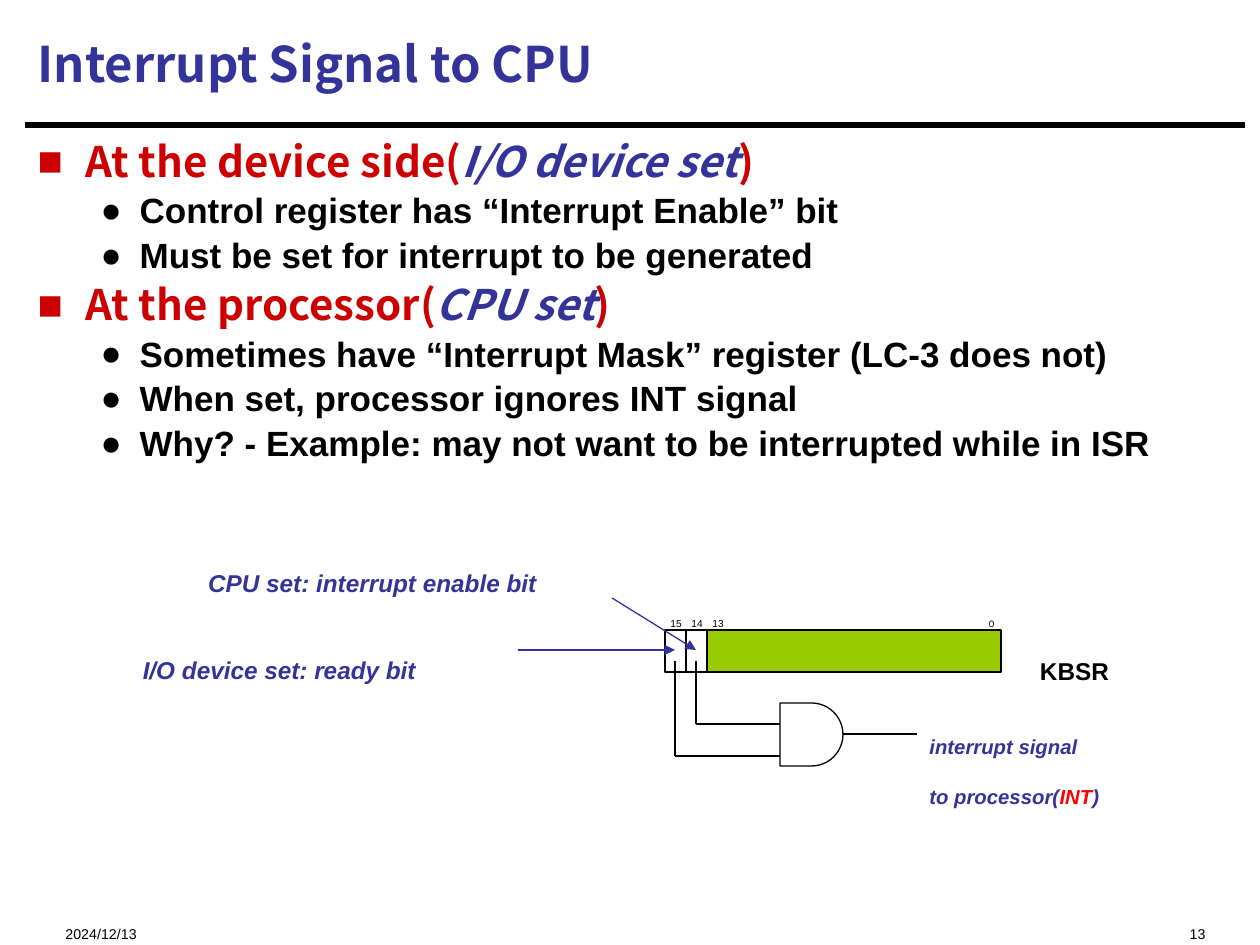
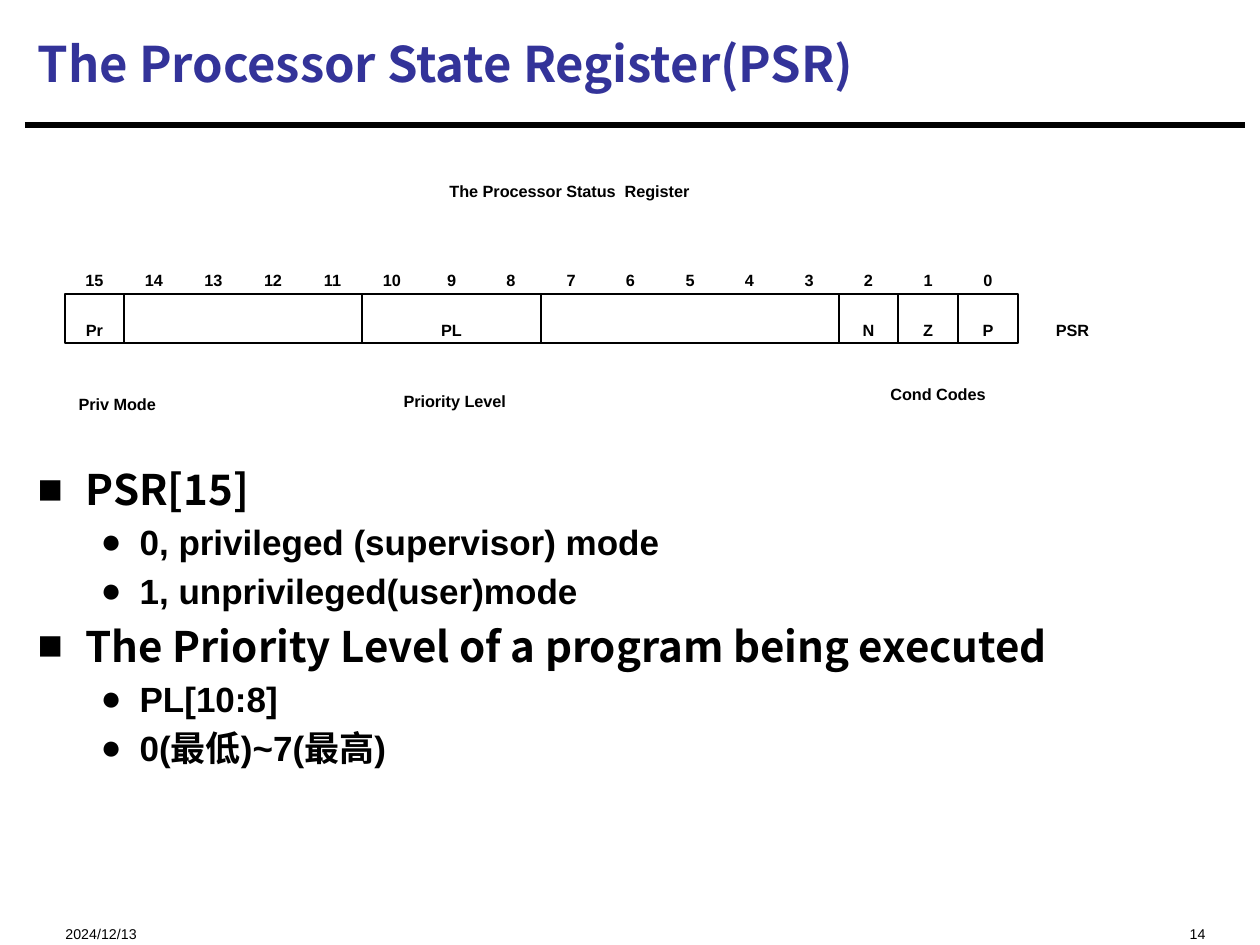
from pptx import Presentation
from pptx.dml.color import RGBColor
from pptx.enum.shapes import MSO_CONNECTOR, MSO_SHAPE as SHAPE
from pptx.enum.text import MSO_ANCHOR as ANCHOR, MSO_AUTO_SIZE as AUTO, PP_ALIGN as ALIGN
from pptx.oxml.ns import qn
from pptx.util import Pt
from lxml.etree import SubElement

PX = 914400 / 126
BLACK, WHITE, BLUE, CRIMSON = "000000", "FFFFFF", "333399", "CC0000"
RED, GREEN = "FF0000", "99CC00"
ARIAL, HEAVY = "Arial", "Noto Sans CJK SC"
SUBSCRIPT = "-30000"
DATE = "2024/12/13"

# Bullet levels: character, left margin, hanging indent, size, font
LEVELS = [("■", 48, 48, 24, HEAVY), ("●", 102, 39, 20, ARIAL)]


def emu(*lengths):
    return [round(length * PX) for length in lengths]


def color(hex_text):
    return RGBColor.from_string(hex_text)


# Text
def write(para, text, size=16, ink=BLACK, font=ARIAL, bold=True, italic=False, sub=False):
    """Add text to a paragraph; a newline becomes a line break."""
    for index, piece in enumerate(text.split("\n")):
        if index:
            para.add_line_break()
        span = para.add_run()
        span.text = piece
        span.font.size = Pt(size)
        span.font.name = font
        span.font.bold = bold
        span.font.italic = italic
        span.font.color.rgb = color(ink)
        props = span._r.get_or_add_rPr()
        SubElement(props, qn("a:ea")).set("typeface", HEAVY)
        if sub:
            props.set("baseline", SUBSCRIPT)


def label(page, place, text, align=ALIGN.CENTER, wrap=False, **style):
    box = page.shapes.add_textbox(*emu(*place))
    box.text_frame.word_wrap = wrap
    para = box.text_frame.paragraphs[0]
    para.alignment = align
    write(para, text, sub=True, **style)
    return para


# Shapes and lines
def block(page, place, text="", fill=WHITE, outline=BLACK, kind=SHAPE.RECTANGLE):
    box = page.shapes.add_shape(kind, *emu(*place))
    box.shadow.inherit = False
    if fill:
        box.fill.solid()
        box.fill.fore_color.rgb = color(fill)
    else:
        box.fill.background()
    box.line.color.rgb = color(outline)
    box.line.width = Pt(0.75)
    if text:
        frame = box.text_frame
        frame.word_wrap = False
        frame.vertical_anchor = ANCHOR.TOP
        frame.paragraphs[0].alignment = ALIGN.CENTER
        write(frame.paragraphs[0], text, sub=True)


def wire(page, *ends, ink=BLACK, width=0.75, arrow=False):
    line = page.shapes.add_connector(MSO_CONNECTOR.STRAIGHT, *emu(*ends))
    line.line.color.rgb = color(ink)
    line.line.width = Pt(width)
    if arrow:
        SubElement(line.line._get_or_add_ln(), qn("a:tailEnd")).set("type", "triangle")
    SubElement(line._element.spPr, qn("a:effectLst"))


# Placeholders
def prepare(holder, place, anchor):
    holder.left, holder.top, holder.width, holder.height = emu(*place)
    frame = holder.text_frame
    frame.word_wrap = True
    frame.auto_size = AUTO.NONE
    frame.vertical_anchor = anchor
    return frame


def start_page(deck, title, number):
    page = deck.slides.add_slide(deck.slide_layouts[1])
    wire(page, 25, 125, 1245, 125, width=3.75)
    frame = prepare(page.shapes.title, (25, 10, 1218, 106), ANCHOR.MIDDLE)
    frame.paragraphs[0].alignment = ALIGN.LEFT
    write(frame.paragraphs[0], title, size=28, ink=BLUE, font=HEAVY)
    label(page, (53, 901, 315, 34), DATE, ALIGN.LEFT, size=14, bold=False)
    label(page, (840, 901, 378, 34), str(number), ALIGN.RIGHT, size=14, bold=False)
    return page


def bullet_list(page, place, items, spacing=1.0):
    """Each item is a level and its spans; a span is text and its format."""
    frame = prepare(page.placeholders[1], place, ANCHOR.TOP)
    for index, (level, *spans) in enumerate(items):
        para = frame.add_paragraph() if index else frame.paragraphs[0]
        para.level = level
        para.line_spacing = spacing
        mark, margin, hang, size, font = LEVELS[level]
        props = para._p.get_or_add_pPr()
        props.set("marL", str(emu(margin)[0]))
        props.set("indent", str(-emu(hang)[0]))
        SubElement(props, qn("a:buFont")).set("typeface", ARIAL)
        SubElement(props, qn("a:buChar")).set("char", mark)
        for text, style in spans:
            write(para, text, size=size, font=font, **style)


def heading(text, setter):
    return (0, (text + "(", {"ink": CRIMSON}),
            (setter, {"ink": BLUE, "italic": True}), (")", {"ink": CRIMSON}))


def plain(level, text):
    return level, (text, {})


# Slides
def interrupt_page(deck):
    page = start_page(deck, "Interrupt Signal to CPU", 13)
    bullet_list(page, (25, 135, 1218, 755), [
        heading("At the device side", "I/O device set"),
        plain(1, "Control register has “Interrupt Enable” bit"),
        plain(1, "Must be set for interrupt to be generated"),
        heading("At the processor", "CPU set"),
        plain(1, "Sometimes have “Interrupt Mask” register (LC-3 does not)"),
        plain(1, "When set, processor ignores INT signal"),
        plain(1, "Why? - Example: may not want to be interrupted while in ISR"),
    ], spacing=0.9)

    # Keyboard status register
    left, top, bit, height = 665, 630, 21, 42
    for index in range(2):
        block(page, (left + index * bit, top, bit, height))
    block(page, (left + 2 * bit, top, 14 * bit, height), fill=GREEN)
    for index, name in enumerate(("15", "14", "13")):
        label(page, (654 + index * bit, 599, 44, 34), name, size=10, bold=False)
    label(page, (974, 599, 35, 34), "0", size=10, font="Karla", bold=False)
    label(page, (1002, 620, 145, 63), "KBSR", size=24)

    # Who sets each bit
    note = {"size": 24, "ink": BLUE, "italic": True}
    label(page, (74, 532, 597, 64), "CPU set: interrupt enable bit", **note)
    label(page, (29, 619, 501, 63), "I/O device set: ready bit", **note)
    wire(page, 612, 598, 696, 650, ink=BLUE, arrow=True)
    wire(page, 518, 650, 675, 650, ink=BLUE, arrow=True)

    # AND gate and its wires
    block(page, (780, 703, 63, 63), fill=None, kind=SHAPE.FLOWCHART_DELAY)
    for x, y in ((696, 724), (675, 756)):
        wire(page, x, 661, x, y)
        wire(page, x, y, 780, y)
    wire(page, 843, 734, 917, 734)
    signal = {"size": 20, "italic": True}
    para = label(page, (917, 703, 330, 97), "interrupt signal \nto processor(",
                 ALIGN.LEFT, wrap=True, ink=BLUE, **signal)
    write(para, "INT", ink=RED, sub=True, **signal)
    write(para, ")", ink=BLUE, sub=True, **signal)


def psr_page(deck):
    page = start_page(deck, "The Processor State Register(PSR)", 14)

    def edge(cell):
        return 65 + cell * 953 // 16

    # Bit numbers
    for cell in range(16):
        block(page, (edge(cell), 244, edge(cell + 1) - edge(cell), 50),
              str(15 - cell), outline=WHITE)

    # Register fields, each with its width in bits
    cell = 0
    for name, bits in (("Pr", 1), ("", 4), ("PL", 3), ("", 5), ("N", 1), ("Z", 1), ("P", 1)):
        block(page, (edge(cell), 294, edge(cell + bits) - edge(cell), 49), name)
        cell += bits

    # Captions
    for left, top, width, text in (
            (1029, 294, 87, "PSR"),
            (834, 358, 208, "Cond Codes"),
            (333, 365, 248, "Priority Level "),
            (330, 155, 479, "The Processor Status  Register"),
            (25, 368, 189, "Priv Mode ")):
        block(page, (left, top, width, 49), text, outline=WHITE)

    bullet_list(page, (25, 457, 1193, 433), [
        plain(0, "PSR[15]"),
        plain(1, "0, privileged (supervisor) mode"),
        plain(1, "1, unprivileged(user)mode"),
        plain(0, "The Priority Level of a program being executed"),
        plain(1, "PL[10:8]"),
        plain(1, "0(最低)~7(最高)"),
    ])


def main():
    deck = Presentation()
    deck.slide_width, deck.slide_height = emu(1260, 945)
    interrupt_page(deck)
    psr_page(deck)
    deck.save("out.pptx")


if __name__ == "__main__":
    main()
